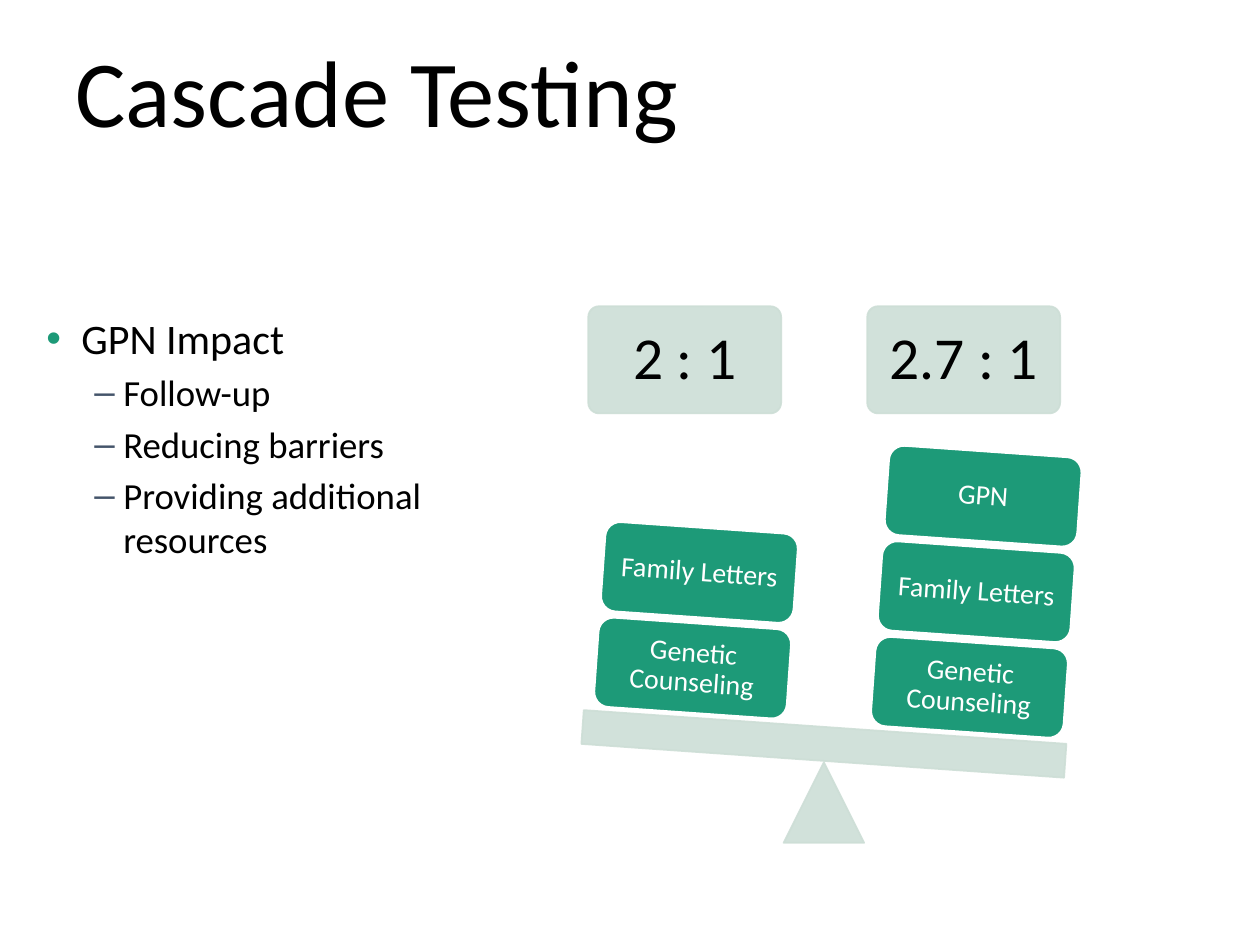
import pptx
import pptx.util
import pptx.dml.color
import pptx.enum.shapes
import pptx.enum.text
import pptx.oxml
import pptx.oxml.ns
from lxml import etree

Pt = pptx.util.Pt
SHAPES = pptx.enum.shapes.MSO_SHAPE
ALIGN = pptx.enum.text.PP_ALIGN
ANCHOR = pptx.enum.text.MSO_ANCHOR
qn = pptx.oxml.ns.qn

TITLE = "Cascade Testing"
BULLETS = [
    (0, "GPN Impact"),
    (1, "Follow-up"),
    (1, "Reducing barriers"),
    (1, "Providing additional resources"),
]
LEVELS = [
    dict(size=24, before=4.8, bullet=("•", "1D9A78", 20, -20)),
    dict(size=21, before=4.2, bullet=("–", "44546A", 44, -16.5)),
]
PANS = [
    dict(ratio="2 : 1", ratio_left=336.2, base=(340.7, 356.2),
         weights=["Genetic Counseling", "Family Letters"]),
    dict(ratio="2.7 : 1", ratio_left=495.6, base=(498.9, 367.2),
         weights=["Genetic Counseling", "Family Letters", "GPN"]),
]
GREEN, PALE, WHITE, BLACK = "1D9A78", "CDDED6", "FFFFFF", "000000"
TILT = 4
RATIO_TOP, RATIO_SIZE = 175, (110.2, 61.2)
WEIGHT_SIZE, WEIGHT_STEP = (110.2, 51.1), (3.9, -54.6)


def rgb(value):
    return pptx.dml.color.RGBColor.from_string(value)


def add_bullet(paragraph, mark, color, left, indent):
    props = paragraph._p.get_or_add_pPr()
    props.set("marL", str(int(Pt(left))))
    props.set("indent", str(int(Pt(indent))))
    bullet_color = etree.SubElement(props, qn("a:buClr"))
    etree.SubElement(bullet_color, qn("a:srgbClr"), val=color)
    etree.SubElement(props, qn("a:buFont"), typeface="Arial")
    etree.SubElement(props, qn("a:buChar"), char=mark)


def write(frame, text, size, color=BLACK, align=ALIGN.LEFT, spacing=None,
          before=None, bullet=None, level=0, new=False):
    paragraph = frame.add_paragraph() if new else frame.paragraphs[0]
    paragraph.alignment = align
    paragraph.level = level
    if spacing:
        paragraph.line_spacing = spacing
    if before:
        paragraph.space_before = Pt(before)
    if bullet:
        add_bullet(paragraph, *bullet)
    run = paragraph.add_run()
    run.text = text
    run.font.size = Pt(size)
    run.font.name = "Calibri"
    run.font.color.rgb = rgb(color)


def text_area(slide, left, top, width, height, anchor):
    frame = slide.shapes.add_textbox(Pt(left), Pt(top), Pt(width), Pt(height)).text_frame
    frame.word_wrap = True
    frame.vertical_anchor = anchor
    return frame


def add_block(slide, preset, left, top, width, height, fill, line, tilt=0, alpha=None):
    block = slide.shapes.add_shape(preset, Pt(left), Pt(top), Pt(width), Pt(height))
    block.shadow.inherit = False
    block.rotation = tilt
    block.fill.solid()
    block.fill.fore_color.rgb = rgb(fill)
    block.line.color.rgb = rgb(line)
    block.line.width = Pt(1)
    if alpha:
        for color in block._element.spPr.iter(qn("a:srgbClr")):
            etree.SubElement(color, qn("a:alpha"), val=str(alpha * 1000))
    return block


def label(block, text, size, color, inset):
    frame = block.text_frame
    frame.word_wrap = True
    frame.vertical_anchor = ANCHOR.MIDDLE
    frame.margin_left = frame.margin_right = Pt(inset)
    frame.margin_top = frame.margin_bottom = Pt(inset)
    write(frame, text, size, color=color, align=ALIGN.CENTER, spacing=0.9)


def add_scale(slide):
    pale = dict(fill=PALE, line=PALE, alpha=90)
    for pan in PANS:
        ratio = add_block(slide, SHAPES.ROUNDED_RECTANGLE, pan["ratio_left"], RATIO_TOP,
                          *RATIO_SIZE, **pale)
        ratio.adjustments[0] = 0.1
        label(ratio, pan["ratio"], 34, BLACK, 10)
    add_block(slide, SHAPES.ISOSCELES_TRIANGLE, 447.8, 435.6, 46, 46, **pale)
    add_block(slide, SHAPES.RECTANGLE, 332.6, 415.4, 276.5, 19.4, tilt=TILT, **pale)
    for pan in PANS:
        for i, weight in enumerate(pan["weights"]):
            left, top = (start + i * step for start, step in zip(pan["base"], WEIGHT_STEP))
            block = add_block(slide, SHAPES.ROUNDED_RECTANGLE, left, top, *WEIGHT_SIZE,
                              fill=GREEN, line=WHITE, tilt=TILT)
            label(block, weight, 16, WHITE, 5)


def main():
    deck = pptx.Presentation()
    deck.slide_width, deck.slide_height = Pt(720), Pt(540)
    slide = deck.slides.add_slide(deck.slide_layouts[6])
    add_scale(slide)
    write(text_area(slide, 36, 33.8, 648, 54, ANCHOR.BOTTOM), TITLE, 54, spacing=0.9)
    impact = text_area(slide, 19.4, 175, 294.5, 208.8, ANCHOR.TOP)
    for i, (level, text) in enumerate(BULLETS):
        write(impact, text, level=level, new=i > 0, **LEVELS[level])
    deck.save("out.pptx")


if __name__ == "__main__":
    main()
